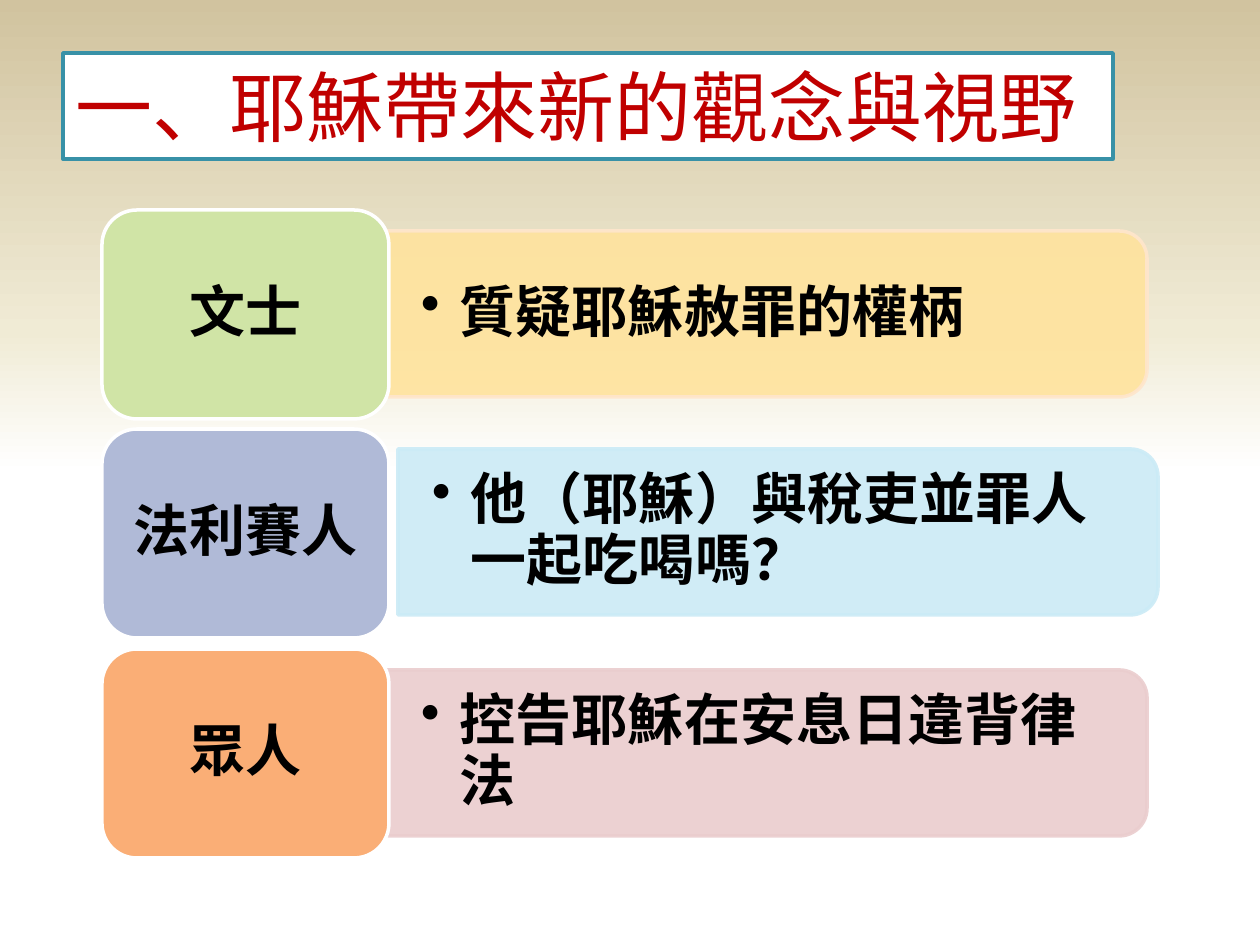
import copy

import pptx
import pptx.dml.color
import pptx.enum.shapes
import pptx.enum.text
import pptx.oxml
import pptx.oxml.ns
import pptx.util

qn = pptx.oxml.ns.qn
SHAPE = pptx.enum.shapes.MSO_SHAPE
ALIGN = pptx.enum.text.PP_ALIGN
ANCHOR = pptx.enum.text.MSO_ANCHOR

# Content
TITLE = "一、耶穌帶來新的觀念與視野"
ROWS = [  # label, label fill, statement, bar fill, bar line, bar shift
    ("文士", "green", "質疑耶穌赦罪的權柄", "yellow", "peach", (0, 0)),
    ("法利賽人", "violet", "他（耶穌）與稅吏並罪人一起吃喝嗎？", "sky", "sky", (11, -1)),
    ("眾人", "orange", "控告耶穌在安息日違背律法", "rose", "rose", (0, 0)),
]
COLORS = {
    "white": "FFFFFF", "black": "000000", "red": "C00000", "teal": "3891A7",
    "cream": "F0EBD5", "tan": "D1C39F", "green": "D0E4A6", "violet": "B0BAD7",
    "orange": "FAAE76", "yellow": "FFE39D", "peach": "FFE6CC",
    "sky": "CBEBF6", "rose": "EACDCE",
}
BACKGROUND = [(0.5, "white"), (0.65, "cream"), (1, "tan")]
CJK = "Noto Sans CJK SC"
TITLE_FONT = {"name": "Lato", "size": pptx.util.Pt(44)}
BODY_FONT = {"name": CJK, "size": pptx.util.Pt(32), "bold": True}

# Layout in px
TITLE_BOX = (63, 53, 1050, 106)
LABEL_X, LABEL_W, LABEL_H = 102, 287, 209
ROWS_TOP, ROWS_SPAN = 210, 439
BAR_X, BAR_W, BAR_H = 387, 760, 166
TEXT_W, TEXT_H = 751, 151
INDENT = 39


def px(n):
    return round(n * 914400 / 126)


def rgb(name):
    return pptx.dml.color.RGBColor.from_string(COLORS[name])


def add_box(s, kind, box, fill, line):
    sp = s.shapes.add_shape(kind, *map(px, box))
    sp.shadow.inherit = False
    sp.fill.solid()
    sp.fill.fore_color.rgb = rgb(fill)
    sp.line.color.rgb = rgb(line)
    sp.line.width = pptx.util.Pt(2)
    return sp


def write(sp, text, font, color, align, inset=(13, 6), line_spacing=None):
    tf = sp.text_frame
    x, y = map(px, inset)
    frame = {"word_wrap": True, "vertical_anchor": ANCHOR.MIDDLE,
             "margin_left": x, "margin_right": x,
             "margin_top": y, "margin_bottom": y}
    for key, value in frame.items():
        setattr(tf, key, value)
    p = tf.paragraphs[0]
    p.alignment = align
    p.line_spacing = line_spacing
    r = p.add_run()
    r.text = text
    for key, value in font.items():
        setattr(r.font, key, value)
    r.font.color.rgb = rgb(color)
    ea = pptx.oxml.parse_xml(f'<a:ea {pptx.oxml.ns.nsdecls("a")} typeface="{CJK}"/>')
    r.font._element.find(qn("a:latin")).addnext(ea)
    return p


def add_bullet(p):
    pPr = p._p.get_or_add_pPr()
    pPr.set("marL", str(px(INDENT)))
    pPr.set("indent", str(-px(INDENT)))
    pPr.append(pptx.oxml.parse_xml(f'<a:buChar {pptx.oxml.ns.nsdecls("a")} char="•"/>'))


def set_alpha(sp, percent):
    for clr in sp._element.spPr.iter(qn("a:srgbClr")):
        clr.append(pptx.oxml.parse_xml(
            f'<a:alpha {pptx.oxml.ns.nsdecls("a")} val="{percent * 1000}"/>'))


def set_background(s):
    fill = s.background.fill
    fill.gradient()
    fill.gradient_angle = 90
    stops = s.element.find(".//" + qn("a:gsLst"))
    stops.append(copy.deepcopy(stops[-1]))
    for stop, (position, color) in zip(fill.gradient_stops, BACKGROUND):
        stop.position = position
        stop.color.rgb = rgb(color)


def add_row(s, i, label, label_fill, statement, bar_fill, bar_line, shift):
    top = ROWS_TOP + i * ROWS_SPAN // 2
    left = BAR_X + shift[0]
    mid = top + LABEL_H // 2 + shift[1]

    # Bar: a shape with two round corners, turned a quarter
    box = (left + (BAR_W - BAR_H) / 2, mid - BAR_W / 2, BAR_H, BAR_W)
    bar = add_box(s, SHAPE.ROUND_2_SAME_RECTANGLE, box, bar_fill, bar_line)
    bar.rotation = 90
    set_alpha(bar, 90)

    # Statement over the bar
    tb = s.shapes.add_textbox(*map(px, (left, mid - TEXT_H / 2, TEXT_W, TEXT_H)))
    add_bullet(write(tb, statement, BODY_FONT, "black", ALIGN.LEFT, (34, 18), 0.9))

    # Label
    sp = add_box(s, SHAPE.ROUNDED_RECTANGLE, (LABEL_X, top, LABEL_W, LABEL_H),
                 label_fill, "white")
    write(sp, label, BODY_FONT, "black", ALIGN.CENTER, (16, 9), 0.9)


def main():
    prs = pptx.Presentation()
    prs.slide_width, prs.slide_height = px(1260), px(945)
    s = prs.slides.add_slide(prs.slide_layouts[6])
    set_background(s)

    # Title
    sp = add_box(s, SHAPE.RECTANGLE, TITLE_BOX, "white", "teal")
    write(sp, TITLE, TITLE_FONT, "red", ALIGN.LEFT)

    # Rows
    for i, row in enumerate(ROWS):
        add_row(s, i, *row)

    prs.save("out.pptx")


if __name__ == "__main__":
    main()
